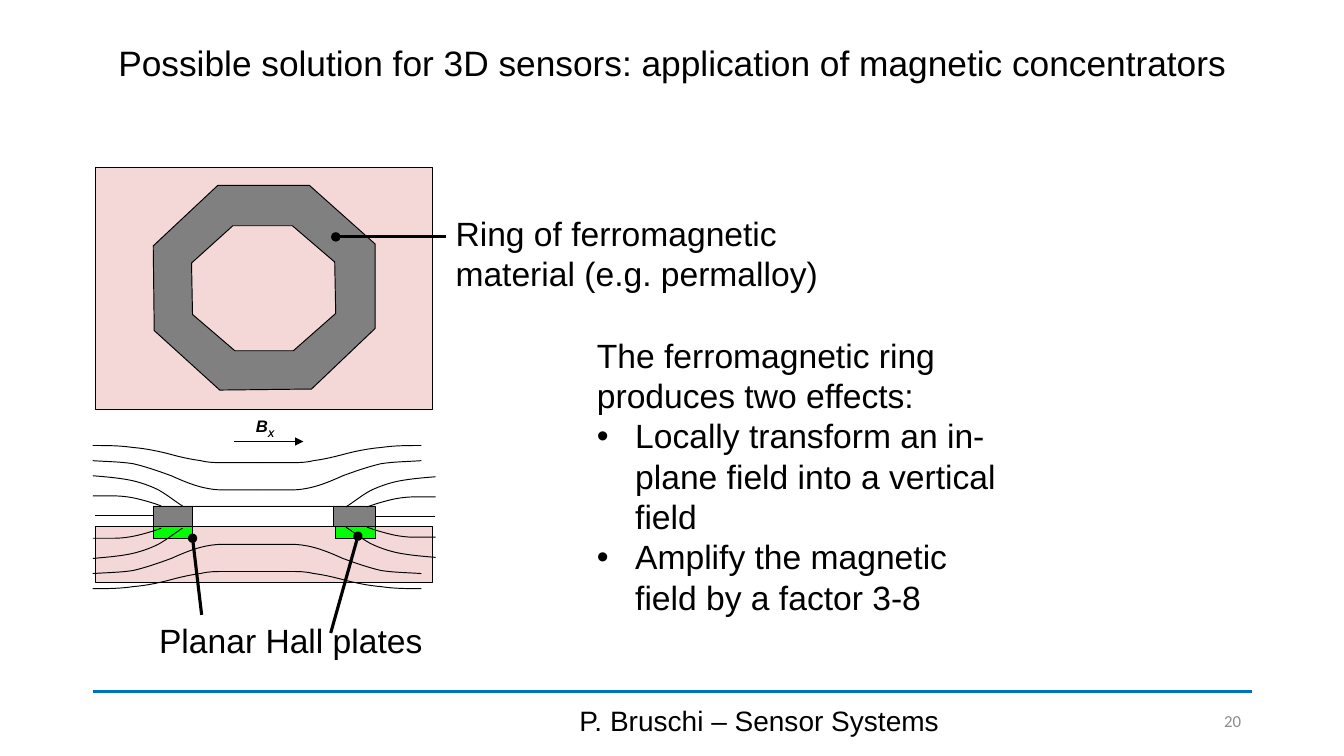
import dataclasses

import pptx
import pptx.dml.color
import pptx.enum.shapes
import pptx.enum.text
import pptx.oxml
import pptx.oxml.ns
import pptx.util

PX = 9144  # 100 px to the inch
ALIGN = pptx.enum.text.PP_ALIGN
ANCHOR = pptx.enum.text.MSO_ANCHOR
FIT = pptx.enum.text.MSO_AUTO_SIZE
SHAPE = pptx.enum.shapes.MSO_SHAPE
qn = pptx.oxml.ns.qn
rgb = pptx.dml.color.RGBColor.from_string


@dataclasses.dataclass(frozen=True)
class Theme:
    ink: str = "000000"
    rule: str = "0070C0"
    substrate: str = "F4D7D7"
    ferromagnet: str = "808080"
    gap: str = "FFFFFF"
    hall_plate: str = "00FF00"
    number: str = "8C8C8C"
    font: str = "Arial"
    number_font: str = "Calibri"
    title: float = 25.2
    body: float = 24
    footer: float = 20
    small: float = 12
    field_label: float = 11.9
    thin: float = 0.68
    arrow: float = 1.41
    callout: float = 2.25
    footer_rule: float = 2.75


theme = Theme()


def write(para, text, size=theme.body, font=theme.font, color=theme.ink,
          bold=False, italic=False, baseline=0):
    """Append one formatted run to a paragraph."""
    span = para.add_run()
    span.text = text
    span.font.size = pptx.util.Pt(size)
    span.font.name = font
    span.font.bold = bold
    span.font.italic = italic
    span.font.color.rgb = rgb(color)
    if baseline:
        span.font._element.set("baseline", str(baseline * 1000))


def draw_line(shapes, start, end, width, color=theme.ink, tip=None):
    """Draw a straight line, with an optional marker at its end."""
    line = shapes.add_connector(pptx.enum.shapes.MSO_CONNECTOR.STRAIGHT,
                                *(value * PX for value in (*start, *end)))
    line.line.color.rgb = rgb(color)
    line.line.width = pptx.util.Pt(width)
    properties = line._element.spPr
    if tip:
        marker = properties.find(qn("a:ln")).makeelement(qn("a:tailEnd"), {"type": tip})
        properties.find(qn("a:ln")).append(marker)
    properties.append(properties.makeelement(qn("a:effectLst"), {}))


deck = pptx.Presentation()
deck.slide_width, deck.slide_height = 1333 * PX, 750 * PX
page = deck.slides.add_slide(deck.slide_layouts[1])
draw_line(page.shapes, (92, 686), (1242, 686), theme.footer_rule, theme.rule)

# Cross-section and top view of the sensor
diagram = page.shapes.add_group_shape().shapes
outlined = []
blocks = [
    ((95, 522, 334, 56), theme.substrate),
    ((152, 502, 220, 20), theme.ferromagnet),
    ((191, 502, 140, 20), theme.gap),
    ((95, 166, 334, 240), theme.substrate),
    ((152, 522, 39, 12), theme.hall_plate),
    ((333, 522, 39, 12), theme.hall_plate),
]
for place, color in blocks:
    block = diagram.add_shape(SHAPE.RECTANGLE, *(value * PX for value in place))
    outlined.append((block, color))

ring_outer = [(307, 184), (216, 184), (152, 244), (153, 328),
              (218, 387), (309, 386), (372, 326), (372, 242)]
ring_inner = [(290, 224), (332, 260), (333, 311), (291, 348),
              (233, 348), (191, 312), (190, 261), (231, 224)]
builder = diagram.build_freeform(*ring_outer[0], scale=PX)
builder.add_line_segments(ring_outer[1:], close=True)
builder.move_to(*ring_inner[0])
builder.add_line_segments(ring_inner[1:], close=True)
outlined.append((builder.convert_to_shape(), theme.ferromagnet))

# Field lines of the upper left quarter: Bezier points, sum of mirrored x, shift on the right
field_lines = [
    ([(255, 459), (243, 459), (231, 459), (222, 459), (213, 459), (207, 459), (199, 457),
      (191, 456), (181, 454), (170, 451), (159, 448), (145, 445), (132, 444),
      (119, 442), (106, 442), (92, 442)], 510, 0),
    ([(255, 486), (243, 486), (231, 486), (222, 486), (213, 486), (207, 485), (199, 483),
      (191, 481), (181, 477), (170, 472), (159, 468), (145, 463), (132, 460),
      (119, 458), (106, 458), (92, 457)], 510, 0),
    ([(92, 472), (104, 473), (116, 474), (127, 476), (138, 478), (149, 482), (157, 486),
      (166, 491), (173, 497), (181, 502)], 524, 1),
    ([(92, 492), (99, 492), (105, 492), (113, 492), (120, 492), (129, 493), (137, 495),
      (145, 497), (152, 499), (160, 502)], 524, 1),
]
MIRROR_Y = 1026
for points, mirror_x, shift in field_lines:
    right = [(mirror_x - x, y + shift) for x, y in points]
    for upper in (points, right):
        for curve in (upper, [(x, MIRROR_Y - y) for x, y in upper]):
            builder = diagram.build_freeform(*curve[0], scale=PX)
            builder.add_line_segments(curve[1:], close=False)
            field_line = builder.convert_to_shape()
            outlined.append((field_line, None))
            outline = next(field_line._element.iter(qn("a:path")))
            segments = outline.findall(qn("a:lnTo"))
            for first in range(0, len(segments), 3):
                bezier = outline.makeelement(qn("a:cubicBezTo"), {})
                outline.append(bezier)
                for segment in segments[first:first + 3]:
                    bezier.append(segment[0])
                    outline.remove(segment)

for shape, color in outlined:
    shape.shadow.inherit = False
    shape.line.color.rgb = rgb(theme.ink)
    shape.line.width = pptx.util.Pt(theme.thin)
    if color:
        shape.fill.solid()
        shape.fill.fore_color.rgb = rgb(color)
    else:
        shape.fill.background()

draw_line(diagram, (94, 511), (152, 511), theme.thin)
draw_line(diagram, (372, 512), (431, 512), theme.thin)
draw_line(diagram, (232, 438), (301, 438), theme.arrow, tip="triangle")

# Texts: shape, place, wrapping, anchor, alignment, lines, format
field_label = diagram.add_textbox(0, 0, 0, 0)
ring_label, plates_label, footer, number = (
    page.shapes.add_textbox(0, 0, 0, 0) for _ in range(4))
effects = page.placeholders[1]
texts = [
    (page.shapes.title, (92, 29, 1150, 72), True, ANCHOR.MIDDLE, ALIGN.CENTER,
     ["Possible solution for 3D sensors: application of magnetic concentrators"],
     {"size": theme.title}),
    (effects, (582, 327, 437, 293), True, ANCHOR.TOP, ALIGN.LEFT,
     ["The ferromagnetic ring produces two effects:",
      "Locally transform an in-plane field into a vertical field",
      "Amplify the magnetic field by a factor 3-8"], {}),
    (field_label, (244, 408, 40, 30), False, ANCHOR.TOP, ALIGN.LEFT, ["B"],
     {"size": theme.field_label, "bold": True, "italic": True}),
    (ring_label, (442, 206, 383, 91), False, ANCHOR.TOP, ALIGN.LEFT,
     ["Ring of ferromagnetic", "material (e.g. permalloy)"], {}),
    (plates_label, (148, 610, 284, 50), False, ANCHOR.TOP, ALIGN.LEFT,
     ["Planar Hall plates"], {}),
    (footer, (442, 695, 622, 40), True, ANCHOR.MIDDLE, ALIGN.CENTER,
     ["P. Bruschi – Sensor Systems"], {"size": theme.footer}),
    (number, (1145, 695, 96, 40), True, ANCHOR.MIDDLE, ALIGN.RIGHT, ["20"],
     {"size": theme.small, "font": theme.number_font, "color": theme.number}),
]
for box, place, wrap, anchor, align, lines, style in texts:
    box.left, box.top, box.width, box.height = (value * PX for value in place)
    frame = box.text_frame
    frame.word_wrap = wrap
    frame.auto_size = FIT.NONE if wrap else FIT.SHAPE_TO_FIT_TEXT
    frame.vertical_anchor = anchor
    for index, line in enumerate(lines):
        para = frame.add_paragraph() if index else frame.paragraphs[0]
        para.alignment = align
        para.space_before = pptx.util.Pt(0)
        write(para, line, **style)

page.shapes.title.text_frame.paragraphs[0].line_spacing = 0.9
write(field_label.text_frame.paragraphs[0], "X", size=theme.field_label,
      bold=True, italic=True, baseline=-25)
for index, para in enumerate(effects.text_frame.paragraphs):
    layout = para._element.get_or_add_pPr()
    indent = 38 * PX if index else 0
    layout.set("marL", str(indent))
    layout.set("indent", str(-indent))
    bullet = ("a:buChar", {"char": "•"}) if index else ("a:buNone", {})
    layout.append(layout.makeelement(qn(bullet[0]), bullet[1]))

callouts = [((442, 235), (333, 235)), ((200, 610), (191, 534)), ((328, 628), (355, 532))]
for start, end in callouts:
    draw_line(page.shapes, start, end, theme.callout, tip="oval")

deck.save("out.pptx")
